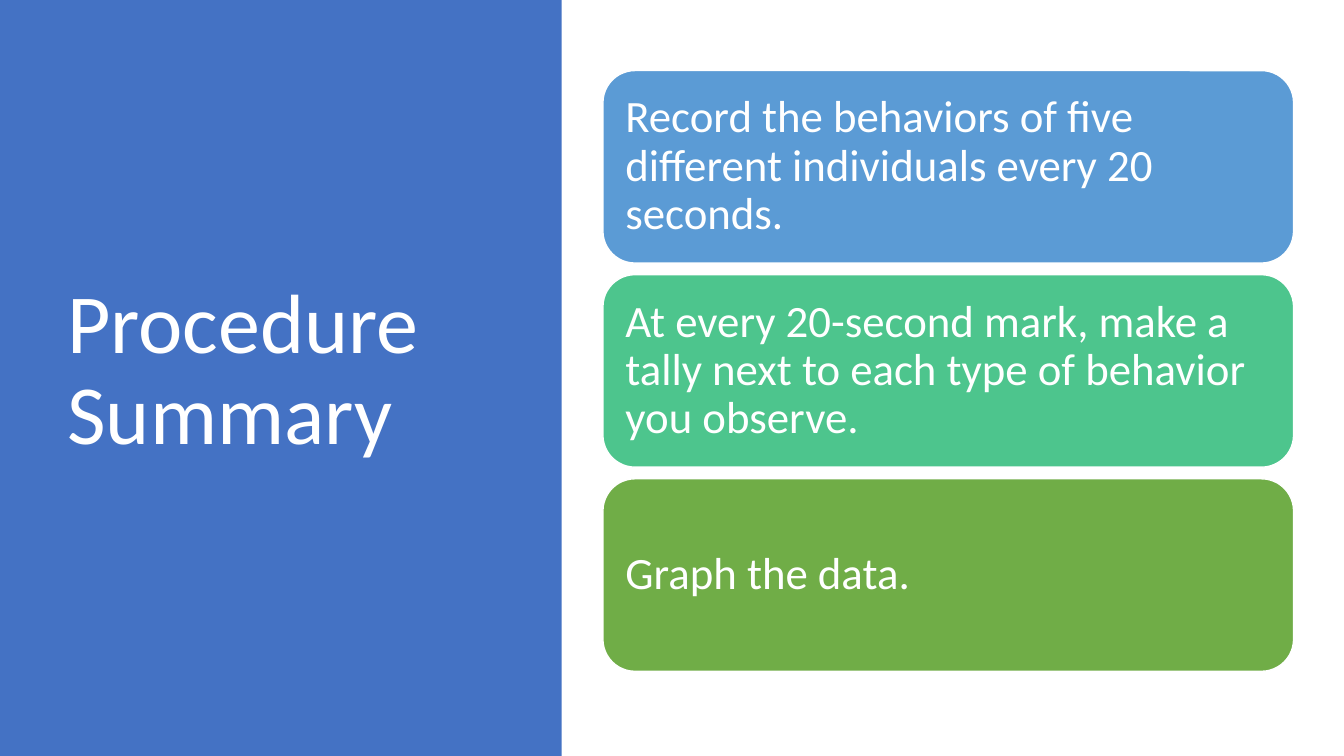
from dataclasses import dataclass

from pptx import Presentation
from pptx.dml.color import RGBColor
from pptx.enum.shapes import MSO_SHAPE
from pptx.enum.text import MSO_ANCHOR, PP_ALIGN
from pptx.util import Inches, Pt

RECTANGLE = MSO_SHAPE.RECTANGLE
ROUNDED = MSO_SHAPE.ROUNDED_RECTANGLE
MIDDLE = MSO_ANCHOR.MIDDLE
LEFT = PP_ALIGN.LEFT


@dataclass(frozen=True)
class Theme:
    font: str = "Calibri"
    title_size: int = 60
    step_size: int = 32
    white: str = "FFFFFF"
    panel: str = "4472C4"
    steps: tuple = ("5B9BD5", "4DC58D", "70AD47")


STEPS = (
    "Record the behaviors of five different individuals every 20 seconds.",
    "At every 20-second mark, make a tally next to each type of behavior you observe.",
    "Graph the data.",
)
STEP_TOP = 0.7
STEP_HEIGHT = 1.91
STEP_PITCH = 2.025


def write_text(shape, text, *, font, size, color, inset_x=0.1, inset_y=0.05):
    frame = shape.text_frame
    frame.word_wrap = True
    frame.vertical_anchor = MIDDLE
    frame.margin_left = frame.margin_right = Inches(inset_x)
    frame.margin_top = frame.margin_bottom = Inches(inset_y)
    paragraph = frame.paragraphs[0]
    paragraph.alignment = LEFT
    paragraph.line_spacing = 0.9
    run = paragraph.add_run()
    run.text = text
    run.font.name = font
    run.font.size = Pt(size)
    run.font.color.rgb = RGBColor.from_string(color)


class SlideBuilder:
    def __init__(self, slide, theme):
        self.slide = slide
        self.theme = theme

    def block(self, kind, left, top, width, height, fill, line=None):
        shape = self.slide.shapes.add_shape(
            kind, Inches(left), Inches(top), Inches(width), Inches(height))
        shape.shadow.inherit = False
        shape.fill.solid()
        shape.fill.fore_color.rgb = RGBColor.from_string(fill)
        if line:
            shape.line.color.rgb = RGBColor.from_string(line)
            shape.line.width = Pt(1)
        else:
            shape.line.fill.background()
        return shape

    def title(self, text, left, top, width, height):
        box = self.slide.shapes.add_textbox(
            Inches(left), Inches(top), Inches(width), Inches(height))
        write_text(box, text, font=self.theme.font, size=self.theme.title_size,
                   color=self.theme.white)

    def step(self, text, top, fill):
        card = self.block(ROUNDED, 5.98, top, 6.85, STEP_HEIGHT, fill, self.theme.white)
        write_text(card, text, font=self.theme.font, size=self.theme.step_size,
                   color=self.theme.white, inset_x=0.13, inset_y=0.13)


def main():
    presentation = Presentation()
    presentation.slide_width = Inches(13.33)
    presentation.slide_height = Inches(7.5)
    theme = Theme()
    slide = presentation.slides.add_slide(presentation.slide_layouts[6])
    builder = SlideBuilder(slide, theme)

    builder.block(RECTANGLE, 0, 0, 5.57, 7.5, theme.panel)
    builder.title("Procedure Summary", 0.57, 0.68, 4.16, 6.02)
    for index, (text, fill) in enumerate(zip(STEPS, theme.steps)):
        builder.step(text, STEP_TOP + index * STEP_PITCH, fill)

    presentation.save("out.pptx")


if __name__ == "__main__":
    main()
